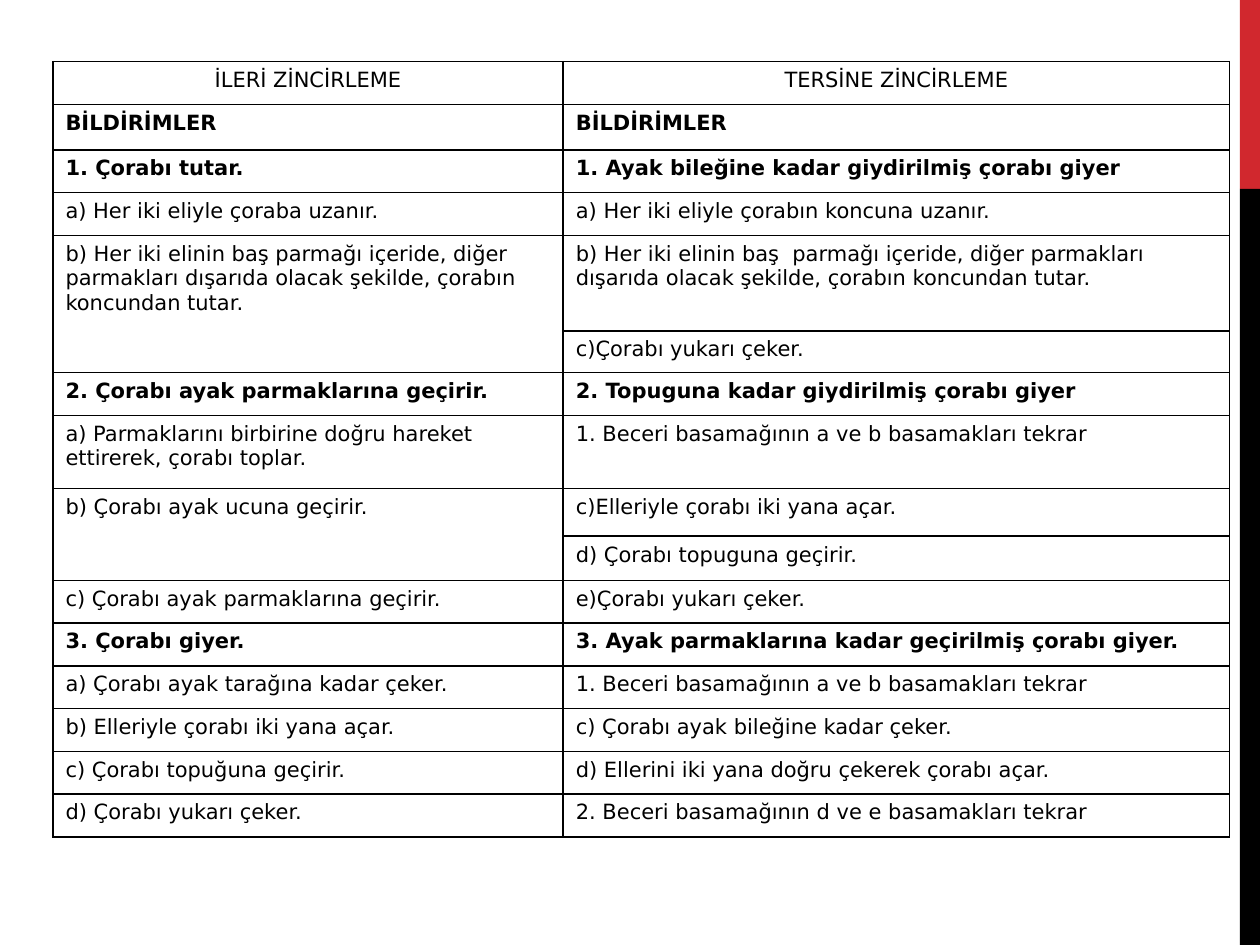
from lxml import etree
from pptx import Presentation
from pptx.dml.color import RGBColor
from pptx.enum.shapes import MSO_SHAPE
from pptx.enum.text import PP_ALIGN
from pptx.oxml.ns import qn
from pptx.util import Inches, Pt

RECT = MSO_SHAPE.RECTANGLE
LEFT, CENTER = PP_ALIGN.LEFT, PP_ALIGN.CENTER
WIDE, HIGH = Inches(10), Inches(7.5)
BLANK = 6

HEAD, BOLD, BODY = "head", "bold", "body"
STEP = 4.53  # usual row height, percent of the slide
COLS = [40.5, 52.9]
# kind, height, forward chaining, backward chaining; None joins the cell above
ROWS = [
    (HEAD, STEP, "İLERİ ZİNCİRLEME", "TERSİNE ZİNCİRLEME"),
    (BOLD, 4.8, "BİLDİRİMLER", "BİLDİRİMLER"),
    (BOLD, STEP, "1. Çorabı tutar.",
     "1. Ayak bileğine kadar giydirilmiş çorabı giyer"),
    (BODY, STEP, "a) Her iki eliyle çoraba uzanır.",
     "a) Her iki eliyle çorabın koncuna uzanır."),
    (BODY, 10.13, "b) Her iki elinin baş parmağı içeride, diğer parmakları "
     "dışarıda olacak şekilde, çorabın koncundan tutar.",
     "b) Her iki elinin baş  parmağı içeride, diğer parmakları "
     "dışarıda olacak şekilde, çorabın koncundan tutar."),
    (BODY, 4.4, None, "c)Çorabı yukarı çeker."),
    (BOLD, STEP, "2. Çorabı ayak parmaklarına geçirir.",
     "2. Topuguna kadar giydirilmiş çorabı giyer"),
    (BODY, 7.73, "a) Parmaklarını birbirine doğru hareket ettirerek, "
     "çorabı toplar.", "1. Beceri basamağının a ve b basamakları tekrar"),
    (BODY, 5.07, "b) Çorabı ayak ucuna geçirir.",
     "c)Elleriyle çorabı iki yana açar."),
    (BODY, 4.67, None, "d) Çorabı topuguna geçirir."),
    (BODY, STEP, "c) Çorabı ayak parmaklarına geçirir.",
     "e)Çorabı yukarı çeker."),
    (BOLD, STEP, "3. Çorabı giyer.",
     "3. Ayak parmaklarına kadar geçirilmiş çorabı giyer."),
    (BODY, STEP, "a) Çorabı ayak tarağına kadar çeker.",
     "1. Beceri basamağının a ve b basamakları tekrar"),
    (BODY, STEP, "b) Elleriyle çorabı iki yana açar.",
     "c) Çorabı ayak bileğine kadar çeker."),
    (BODY, STEP, "c) Çorabı topuğuna geçirir.",
     "d) Ellerini iki yana doğru çekerek çorabı açar."),
    (BODY, STEP, "d) Çorabı yukarı çeker.",
     "2. Beceri basamağının d ve e basamakları tekrar"),
]


def color(code):
    return RGBColor.from_string(code)


def across(share):
    """Percent of the slide's width."""
    return round(WIDE * share / 100)


def down(share):
    """Percent of the slide's height."""
    return round(HIGH * share / 100)


class Deck:
    """Style and current slide."""

    font, size, ink = "DejaVu Sans", Pt(12), "000000"

    def __init__(self, slide):
        self.slide = slide

    def bar(self, left, top, width, height, fill):
        shape = self.slide.shapes.add_shape(
            RECT, across(left), down(top), across(width), down(height))
        shape.shadow.inherit = False
        shape.fill.solid()
        shape.fill.fore_color.rgb = color(fill)
        shape.line.fill.background()

    def frame(self, cell):
        """Draw a thin line on all four sides of a cell."""
        props = cell._tc.get_or_add_tcPr()
        for side in ("a:lnL", "a:lnR", "a:lnT", "a:lnB"):
            line = etree.SubElement(props, qn(side), w=str(Pt(1)))
            fill = etree.SubElement(line, qn("a:solidFill"))
            etree.SubElement(fill, qn("a:srgbClr"), val=self.ink)
        cell.fill.background()

    def label(self, cell, text, kind):
        para = cell.text_frame.paragraphs[0]
        para.alignment = CENTER if kind == HEAD else LEFT
        run = para.add_run()
        run.text = text
        run.font.name = self.font
        run.font.size = self.size
        run.font.bold = kind == BOLD
        run.font.color.rgb = color(self.ink)

    def table(self, left, top, cols, rows):
        high = sum(row[1] for row in rows)
        table = self.slide.shapes.add_table(
            len(rows), len(cols), across(left), down(top),
            across(sum(cols)), down(high)).table
        table.first_row = table.horz_banding = False
        for col, width in zip(table.columns, cols):
            col.width = across(width)
        for r, (kind, height, *texts) in enumerate(rows):
            table.rows[r].height = down(height)
            for c, text in enumerate(texts):
                cell = table.cell(r, c)
                self.frame(cell)
                if text is None:
                    table.cell(r - 1, c).merge(cell)
                else:
                    self.label(cell, text, kind)


def main():
    show = Presentation()
    show.slide_width, show.slide_height = WIDE, HIGH
    deck = Deck(show.slides.add_slide(show.slide_layouts[BLANK]))
    deck.bar(98.4, 0, 1.6, 20, "D1282E")
    deck.bar(98.4, 20, 1.6, 80, "000000")
    deck.table(4.2, 6.53, COLS, ROWS)
    show.save("out.pptx")


if __name__ == "__main__":
    main()
